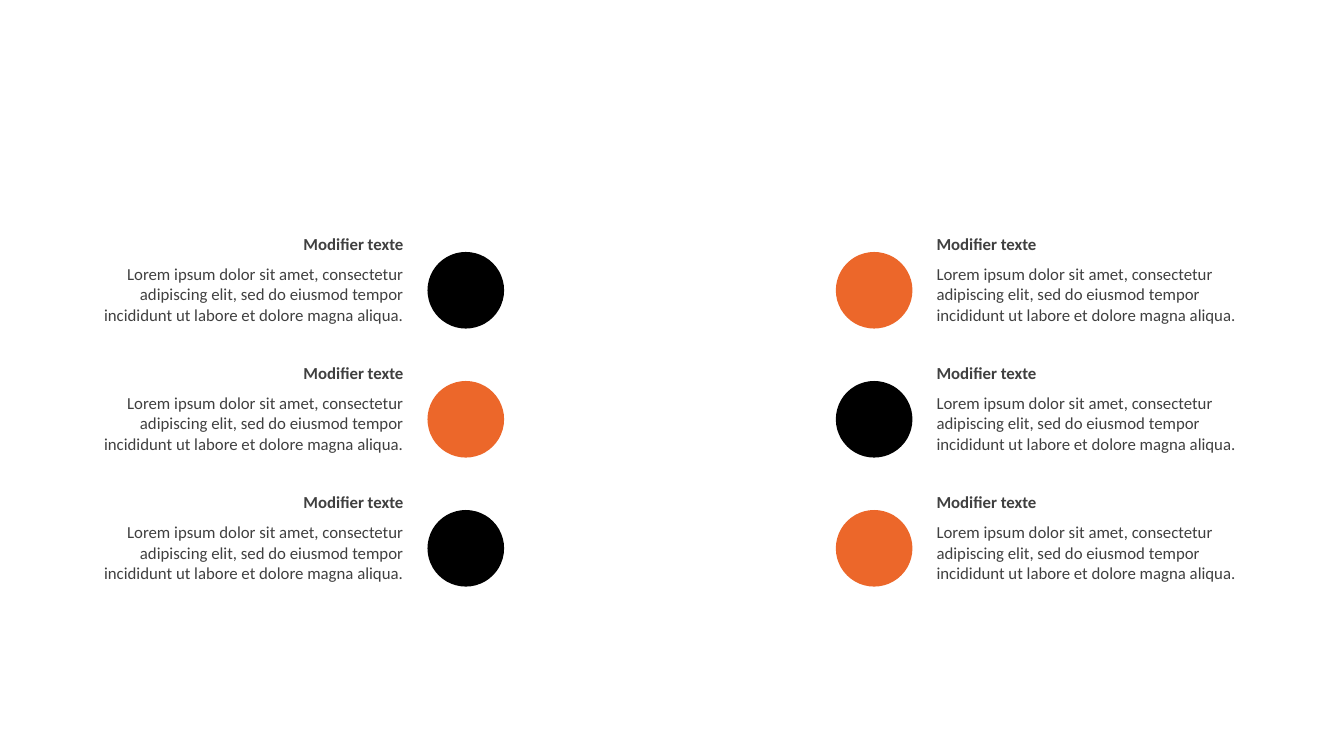
from pptx import Presentation
from pptx.dml.color import RGBColor
from pptx.enum.shapes import MSO_SHAPE
from pptx.enum.text import MSO_AUTO_SIZE, PP_ALIGN
from pptx.util import Inches, Pt

OVAL = MSO_SHAPE.OVAL
LEFT, RIGHT = PP_ALIGN.LEFT, PP_ALIGN.RIGHT
FIT_SHAPE = MSO_AUTO_SIZE.SHAPE_TO_FIT_TEXT

BLACK, ORANGE, GREY = "000000", "EC672A", "404040"
TITLE = "Modifier texte"
BODY = ("Lorem ipsum dolor sit amet, consectetur adipiscing elit, "
        "sed do eiusmod tempor incididunt ut labore et dolore magna aliqua.")
COLUMNS = [
    {"circle_left": 4.24, "text_left": 0.69, "text_width": 3.41, "align": RIGHT,
     "items": [(TITLE, BODY, BLACK), (TITLE, BODY, ORANGE), (TITLE, BODY, BLACK)]},
    {"circle_left": 8.29, "text_left": 9.19, "text_width": 3.45, "align": LEFT,
     "items": [(TITLE, BODY, ORANGE), (TITLE, BODY, BLACK), (TITLE, BODY, ORANGE)]},
]
FIRST_TOP, ROW_STEP = 2.27, 1.28
CIRCLE_OFFSET, CIRCLE_SIZE = 0.23, 0.76
TITLE_HEIGHT, BODY_OFFSET, BODY_HEIGHT = 0.3, 0.3, 0.71


def color(value):
    return RGBColor.from_string(value)


def add_circle(page, left, top, fill):
    circle = page.shapes.add_shape(
        OVAL, Inches(left), Inches(top), Inches(CIRCLE_SIZE), Inches(CIRCLE_SIZE))
    circle.shadow.inherit = False
    circle.fill.solid()
    circle.fill.fore_color.rgb = color(fill)
    circle.line.fill.background()


def add_text(group, text, left, top, width, height, align, bold):
    box = group.shapes.add_textbox(
        Inches(left), Inches(top), Inches(width), Inches(height))
    frame = box.text_frame
    frame.word_wrap = True
    frame.auto_size = FIT_SHAPE
    para = frame.paragraphs[0]
    para.alignment = align
    span = para.add_run()
    span.text = text
    span.font.name = "Calibri"
    span.font.size = Pt(12)
    span.font.bold = bold
    span.font.color.rgb = color(GREY)


def main():
    deck = Presentation()
    deck.slide_width, deck.slide_height = Inches(13.33), Inches(7.5)
    page = deck.slides.add_slide(deck.slide_layouts[6])
    for column in COLUMNS:
        left, width, align = column["text_left"], column["text_width"], column["align"]
        for row, (title, body, fill) in enumerate(column["items"]):
            top = FIRST_TOP + row * ROW_STEP
            add_circle(page, column["circle_left"], top + CIRCLE_OFFSET, fill)
            group = page.shapes.add_group_shape()
            add_text(group, body, left, top + BODY_OFFSET, width, BODY_HEIGHT, align, False)
            add_text(group, title, left, top, width, TITLE_HEIGHT, align, True)
    deck.save("out.pptx")


if __name__ == "__main__":
    main()
